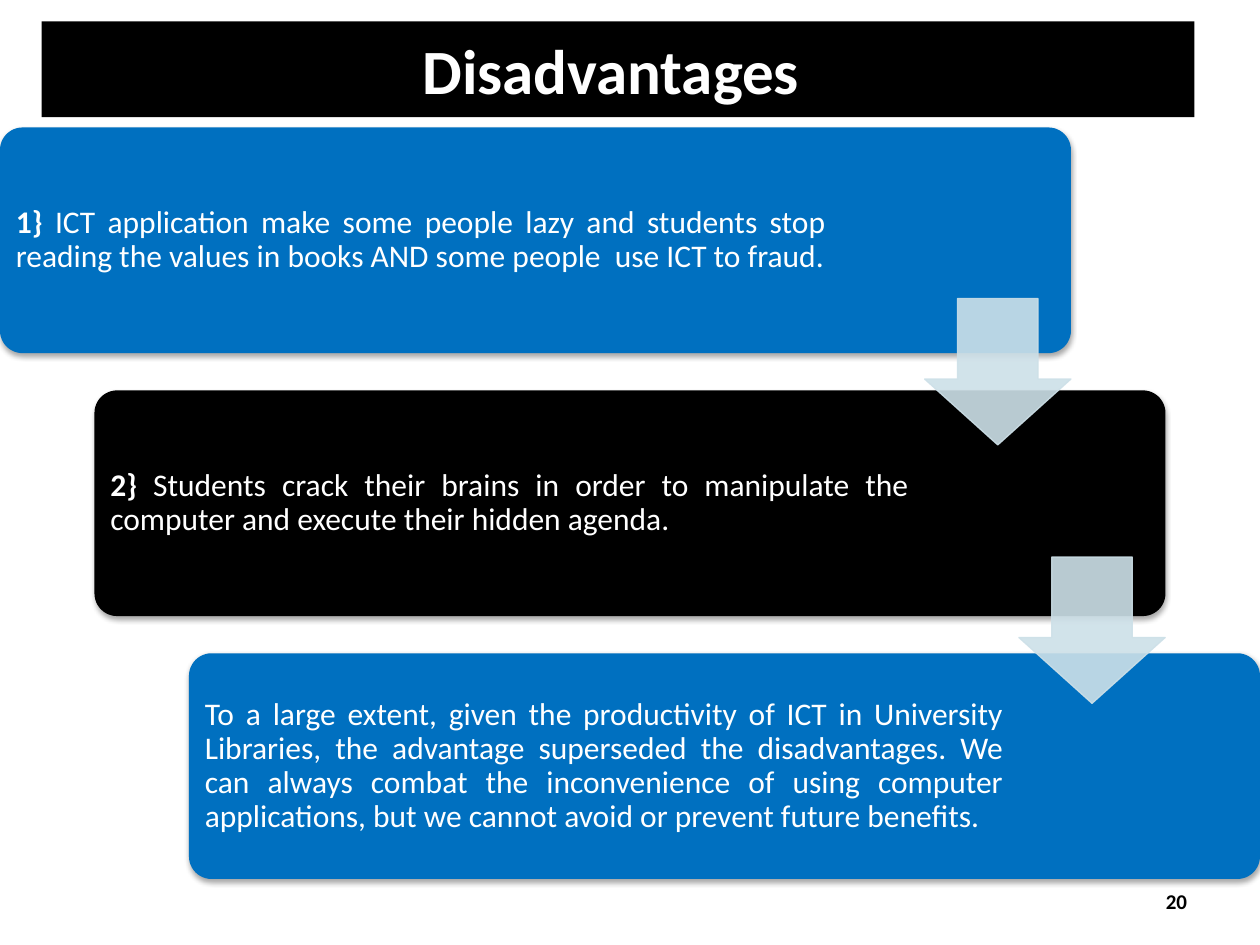
from lxml import etree
from pptx import Presentation
from pptx import util as u
from pptx.dml.color import RGBColor
from pptx.enum import shapes, text
from pptx.oxml import parse_xml
from pptx.oxml.ns import nsdecls, qn

BLACK = RGBColor(0x00, 0x00, 0x00)
WHITE = RGBColor(0xFF, 0xFF, 0xFF)
BLUE = RGBColor(0x00, 0x70, 0xC0)
PALE = RGBColor(0xCD, 0xE0, 0xE8)

SHADOW = (
    f'<a:effectLst {nsdecls("a")}>'
    '<a:outerShdw blurRad="39400" dist="22900" dir="5400000" rotWithShape="0">'
    '<a:srgbClr val="000000"><a:alpha val="35000"/></a:srgbClr>'
    '</a:outerShdw></a:effectLst>'
)


def add_span(para, words, size, color, bold=False):
    span = para.add_run()
    span.text = words
    span.font.name = "Calibri"
    span.font.size = u.Pt(size)
    span.font.bold = bold
    span.font.color.rgb = color


def add_text_box(left, top, width, height, margin):
    """Add a wrapping, vertically centred text box; return its first paragraph."""
    frame = page.shapes.add_textbox(left, top, width, height).text_frame
    frame.word_wrap = True
    frame.vertical_anchor = text.MSO_ANCHOR.MIDDLE
    frame.margin_left = frame.margin_right = margin
    frame.margin_top = frame.margin_bottom = margin
    return frame.paragraphs[0]


deck = Presentation()
deck.slide_width, deck.slide_height = u.Cm(25.4), u.Cm(19.05)
page = deck.slides.add_slide(deck.slide_layouts[5])

# Title bar
title = page.shapes.title
title.left, title.top = u.Cm(0.84), u.Cm(0.43)
title.width, title.height = u.Cm(23.24), u.Cm(1.93)
title.fill.solid()
title.fill.fore_color.rgb = BLACK
title.text_frame.vertical_anchor = text.MSO_ANCHOR.MIDDLE
heading = title.text_frame.paragraphs[0]
heading.alignment = text.PP_ALIGN.CENTER
add_span(heading, "Disadvantages ", 36, WHITE, bold=True)

# Slide number
number = add_text_box(u.Cm(18.21), u.Cm(17.65), u.Cm(5.92), u.Cm(1.02), u.Cm(0.2))
number.alignment = text.PP_ALIGN.RIGHT
add_span(number, "20", 12, BLACK, bold=True)

# Staircase of cards: label, wording, fill, text width in cm
cards = [
    ("1} ", "ICT application make some people lazy and students stop reading "
            "the values in books AND some people  use ICT to fraud.", BLUE, 16.69),
    ("2} ", "Students crack their brains in order to manipulate the computer "
            "and execute their hidden agenda.", BLACK, 16.46),
    ("", "To a large extent, given the productivity of ICT in University "
         "Libraries, the advantage superseded the disadvantages. We can always "
         "combat the inconvenience of using computer applications, but we cannot "
         "avoid or prevent future benefits. ", BLUE, 16.46),
]
card_width, card_height = u.Cm(21.59), u.Cm(4.55)
step_x = (deck.slide_width - card_width) // (len(cards) - 1)
step_y = u.Cm(5.3)
inset = u.Cm(0.14)

for index, (label, wording, fill, text_width) in enumerate(cards):
    left, top = index * step_x, u.Cm(2.57) + index * step_y
    card = page.shapes.add_shape(
        shapes.MSO_SHAPE.ROUNDED_RECTANGLE, left, top, card_width, card_height)
    card.adjustments[0] = 0.1
    card.fill.solid()
    card.fill.fore_color.rgb = fill
    card.line.fill.background()
    card._element.spPr.append(parse_xml(SHADOW))

    para = add_text_box(left + inset, top + inset, u.Cm(text_width),
                        card_height - 2 * inset, u.Cm(0.18))
    para.alignment = text.PP_ALIGN.JUSTIFY
    para.line_spacing = 0.9
    if label:
        add_span(para, label, 18, WHITE, bold=True)
    add_span(para, wording, 18, WHITE)

# Arrows leading from each card to the next
for index in range(len(cards) - 1):
    arrow = page.shapes.add_shape(
        shapes.MSO_SHAPE.DOWN_ARROW, u.Cm(18.64 + index * 1.9),
        u.Cm(6.02 + index * 5.21), u.Cm(2.95), u.Cm(2.95))
    # The preset lists the head length first, then the shaft width
    arrow.adjustments[0], arrow.adjustments[1] = 0.55, 0.45
    arrow.shadow.inherit = False
    arrow.fill.solid()
    arrow.fill.fore_color.rgb = PALE
    arrow.line.color.rgb = PALE
    arrow.line.width = u.Pt(0.75)
    for color in arrow._element.spPr.iter(qn("a:srgbClr")):
        etree.SubElement(color, qn("a:alpha")).set("val", "90000")

deck.save("out.pptx")
